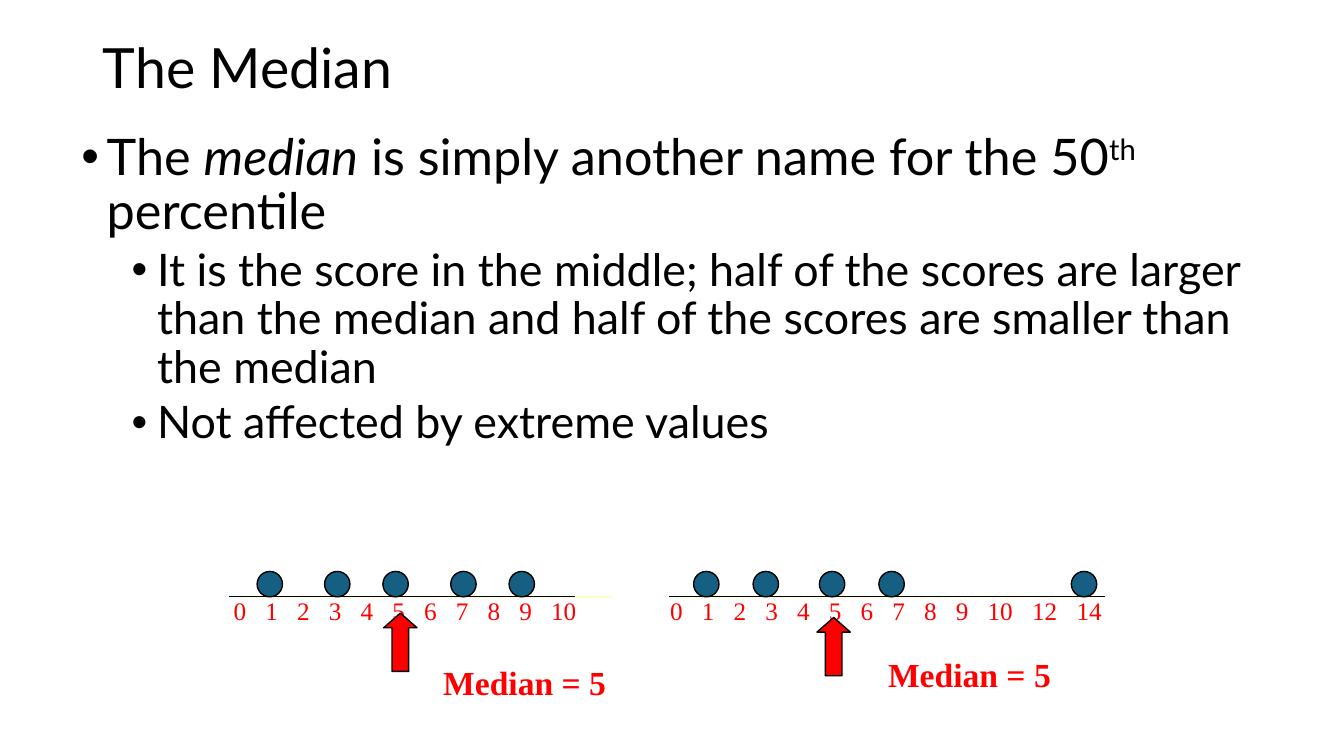
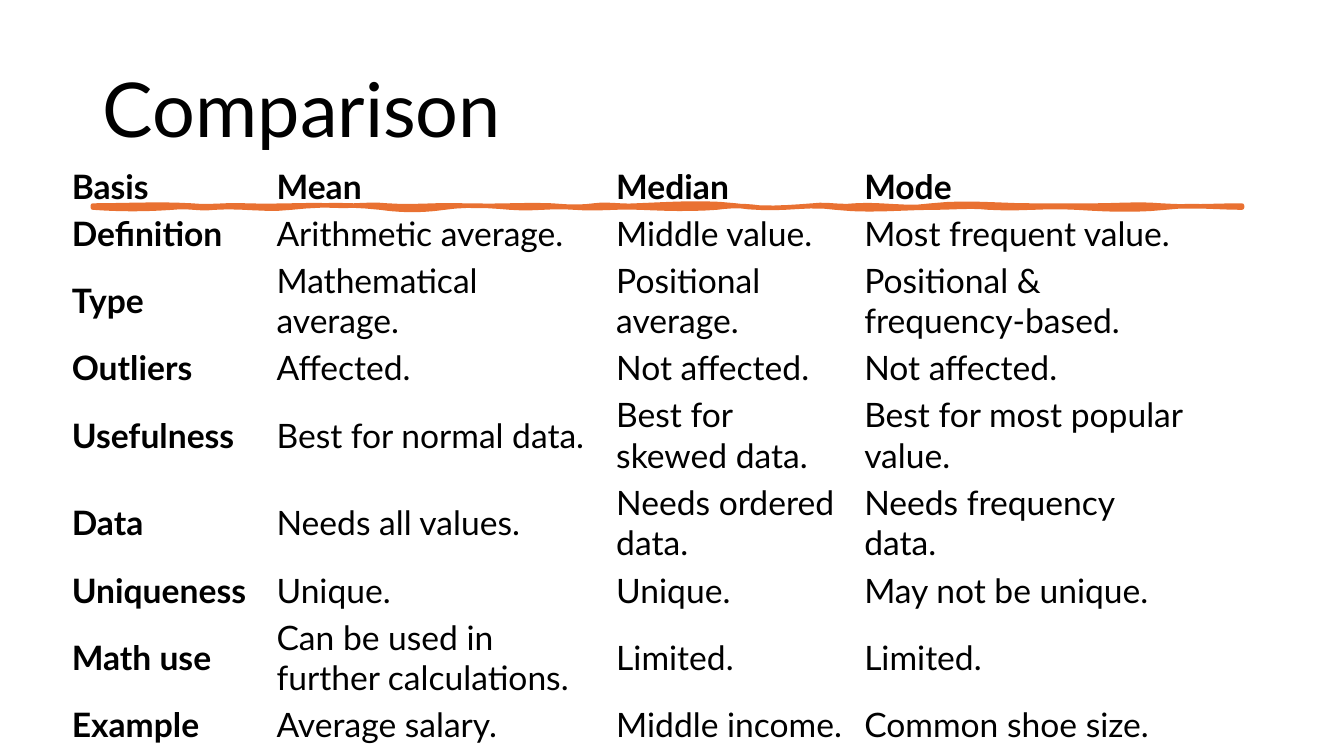
from lxml import etree
from pptx import Presentation
from pptx.dml.color import RGBColor
from pptx.enum.shapes import MSO_CONNECTOR, MSO_SHAPE
from pptx.enum.text import MSO_ANCHOR, MSO_AUTO_SIZE, PP_ALIGN
from pptx.oxml.ns import qn
from pptx.util import Cm, Pt

COLORS = {
    "text": "000000",
    "background": "FFFFFF",
    "dot": "156082",
    "median": "FF0000",
    "pale": "FFFFCC",
    "brush": "E97132",
}
BODY_FONT, AXIS_FONT = "Lato", "Times New Roman"
TITLE_LEFT, TITLE_TOP, TITLE_WIDTH = 2.34, 1.02, 29.21
DIGIT_WIDTH, LABEL_GAP = 0.32, 0.48
NO_STYLE_TABLE = "{2D5ABB26-0587-4C30-8999-92F81FD0307C}"

DEFINITION = [
    (0, [("The ", {}), ("median", {"italic": True}),
         (" is simply another name for the 50", {}),
         ("th", {"baseline": 30}), (" percentile", {})]),
    (1, [("It is the score in the middle; half of the scores are larger than "
          "the median and half of the scores are smaller than the median", {})]),
    (1, [("Not affected by extreme values", {})]),
]

# Number lines: lengths in cm, relative to the left and top of each box.
NUMBER_LINES = [
    {"box": (5.64, 14.4, 11.02), "scores": range(11),
     "dots": (0.84, 2.54, 4.01, 5.72, 7.19),
     "axis": (0.13, 8.86), "pale_axis": (0.43, 9.8),
     "arrow": (4.03, 1.05), "caption": (5.28, 2.08)},
    {"box": (16.64, 14.4, 11.89), "scores": (*range(11), 12, 14),
     "dots": (0.84, 2.34, 4.01, 5.51, 10.36),
     "axis": (0.23, 11.2), "pale_axis": (0.46, 11.07),
     "arrow": (3.95, 1.16), "caption": (5.49, 1.88)},
]

COMPARISON = [
    ("Basis", "Mean", "Median", "Mode"),
    ("Definition", "Arithmetic average.", "Middle value.", "Most frequent value."),
    ("Type", "Mathematical average.", "Positional average.",
     "Positional & frequency-based."),
    ("Outliers", "Affected.", "Not affected.", "Not affected."),
    ("Usefulness", "Best for normal data.", "Best for skewed data.",
     "Best for most popular value."),
    ("Data", "Needs all values.", "Needs ordered data.", "Needs frequency data."),
    ("Uniqueness", "Unique.", "Unique.", "May not be unique."),
    ("Math use", "Can be used in further calculations.", "Limited.", "Limited."),
    ("Example", "Average salary.", "Middle income.", "Common shoe size."),
]
COLUMN_WIDTHS = (5.16, 8.56, 6.25, 8.51)
ONE_LINE, TWO_LINES = 1.18, 2.21
TWO_LINE_ROWS = {"Type", "Usefulness", "Data", "Math use"}

# Brush stroke edges: (end of the wave, bend before that end).
UPPER_EDGE = [
    (2.49, -0.05), (3.86, -0.03), (6.07, -0.03), (7.42, -0.05), (9.35, -0.03),
    (11.58, -0.03), (12.62, 0.05), (13.69, 0.03), (16.21, -0.1), (18.14, 0.05),
    (19.2, 0.05), (21.13, 0.1), (23.65, 0), (25.27, 0), (26.92, -0.05), (28.96, 0),
]
LOWER_EDGE = [
    (27.03, -0.08), (24.79, 0.05), (22.58, 0.05), (21.23, 0), (18.72, 0.1),
    (16.79, 0.05), (15.72, -0.05), (13.79, 0.03), (12.14, 0.05), (10.52, 0.05),
    (8.86, -0.08), (7.24, 0.08), (5, -0.08), (3.07, -0.05), (2.01, -0.05), (0, 0.05),
]


def rgb(color):
    return RGBColor.from_string(COLORS[color])


def write(paragraph, text, size, font=BODY_FONT, color="text", bold=False,
          italic=False, baseline=0):
    run = paragraph.add_run()
    run.text = text
    run.font.size, run.font.name = Pt(size), font
    run.font.bold, run.font.italic = bold, italic
    run.font.color.rgb = rgb(color)
    if baseline:
        run.font._element.set("baseline", str(baseline * 1000))


def add_text_frame(slide, left, top, width, height):
    frame = slide.shapes.add_textbox(Cm(left), Cm(top), Cm(width), Cm(height)).text_frame
    frame.word_wrap = True
    return frame


def add_titled_slide(deck, title, height, size):
    slide = deck.slides.add_slide(deck.slide_layouts[5])
    slide.background.fill.solid()
    slide.background.fill.fore_color.rgb = rgb("background")
    heading = slide.shapes.title
    heading.left, heading.top = Cm(TITLE_LEFT), Cm(TITLE_TOP)
    heading.width, heading.height = Cm(TITLE_WIDTH), Cm(height)
    frame = heading.text_frame
    frame.auto_size = MSO_AUTO_SIZE.NONE
    frame.vertical_anchor = MSO_ANCHOR.MIDDLE
    paragraph = frame.paragraphs[0]
    paragraph.alignment, paragraph.line_spacing = PP_ALIGN.LEFT, 0.9
    write(paragraph, title, size)
    return slide


def add_bullets(slide, box, items):
    frame = add_text_frame(slide, *box)
    for index, (level, runs) in enumerate(items):
        paragraph = frame.add_paragraph() if index else frame.paragraphs[0]
        paragraph.level, paragraph.line_spacing = level, 0.9
        paragraph.space_before = Pt(5 if level else 10)
        properties = paragraph._p.get_or_add_pPr()
        properties.set("marL", str(Cm(0.64 + 1.27 * level)))
        properties.set("indent", str(-Cm(0.64)))
        etree.SubElement(properties, qn("a:buFont"), typeface="Arial")
        etree.SubElement(properties, qn("a:buChar"), char="•")
        for text, style in runs:
            write(paragraph, text, 32 if level else 36, **style)


def add_outlined(slide, preset, left, top, width, height, color):
    shape = slide.shapes.add_shape(preset, Cm(left), Cm(top), Cm(width), Cm(height))
    shape.shadow.inherit = False
    shape.fill.solid()
    shape.fill.fore_color.rgb = rgb(color)
    shape.line.color.rgb = rgb("text")
    shape.line.width = Pt(1)
    return shape


def add_rule(slide, start, end, y, color, weight):
    rule = slide.shapes.add_connector(
        MSO_CONNECTOR.STRAIGHT, Cm(start), Cm(y), Cm(end), Cm(y))
    rule.line.color.rgb = rgb(color)
    rule.line.width = Pt(weight)
    etree.SubElement(rule._element.spPr, qn("a:effectLst"))


def add_red_text(slide, left, top, width, height, text, size, bold=False):
    frame = add_text_frame(slide, left, top, width, height)
    frame.margin_top = Cm(0.2)
    paragraph = frame.paragraphs[0]
    write(paragraph, text, size, font=AXIS_FONT, color="median", bold=bold)
    return paragraph


def set_score_tabs(paragraph, labels):
    """Put a tab stop after each label, one fixed gap beyond its last digit."""
    tabs = etree.SubElement(paragraph._p.get_or_add_pPr(), qn("a:tabLst"))
    position = 0
    for label in labels[:-1]:
        position += len(label) * DIGIT_WIDTH + LABEL_GAP
        etree.SubElement(tabs, qn("a:tab"), pos=str(Cm(position)), algn="l")


def add_number_line(slide, box, scores, dots, axis, pale_axis, arrow, caption):
    left, top, width = box
    diameter = 0.64
    axis_y = top + diameter
    add_rule(slide, left + pale_axis[0], left + pale_axis[1], axis_y, "pale", 1)
    labels = [str(score) for score in scores]
    scale = add_red_text(slide, left, top + 0.41, width, 1.02, "\t".join(labels), 18)
    set_score_tabs(scale, labels)
    for dot in dots:
        add_outlined(slide, MSO_SHAPE.OVAL, left + dot, top, diameter, diameter, "dot")
    pointer = add_outlined(slide, MSO_SHAPE.UP_ARROW, left + arrow[0], top + arrow[1],
                           0.84, 1.47, "median")
    pointer.adjustments[1] = 0.44
    add_red_text(slide, left + caption[0], top + caption[1], 5, 1.27,
                 "Median = 5", 24, bold=True)
    add_rule(slide, left + axis[0], left + axis[1], axis_y, "text", 0.75)


def wave_points(start, y, edge, steps=6):
    """Sample smooth waves that each leave and return to the height y."""
    points, bend_in = [], 0
    for end, bend_out in edge:
        for step in range(1, steps + 1):
            t = step / steps
            lift = 3 * t * (1 - t) * (bend_in * (1 - t) + bend_out * t)
            points.append((Cm(start + (end - start) * t), Cm(y + lift)))
        start, bend_in = end, -bend_out
    return points


def add_brush_stroke(slide, left, top, thickness=0.05):
    upper = wave_points(0, top, UPPER_EDGE)
    lower = wave_points(UPPER_EDGE[-1][0], top + thickness, LOWER_EDGE)
    corner = (Cm(UPPER_EDGE[-1][0]), Cm(top + thickness))
    outline = slide.shapes.build_freeform(0, Cm(top))
    outline.add_line_segments([*upper, corner, *lower], close=True)
    stroke = outline.convert_to_shape(Cm(left), 0)
    stroke.shadow.inherit = False
    stroke.fill.solid()
    stroke.fill.fore_color.rgb = rgb("brush")
    stroke.line.color.rgb = rgb("brush")
    stroke.line.width = Pt(3.25)


def add_comparison_table(slide, left, top, rows):
    heights = [TWO_LINES if row[0] in TWO_LINE_ROWS else ONE_LINE for row in rows]
    table = slide.shapes.add_table(
        len(rows), len(COLUMN_WIDTHS), Cm(left), Cm(top),
        Cm(sum(COLUMN_WIDTHS)), Cm(sum(heights))).table
    table.first_row = table.horz_banding = False
    table._tbl.tblPr.find(qn("a:tableStyleId")).text = NO_STYLE_TABLE
    for column, width in zip(table.columns, COLUMN_WIDTHS):
        column.width = Cm(width)
    for row_index, (row, height) in enumerate(zip(rows, heights)):
        table.rows[row_index].height = Cm(height)
        for column_index, text in enumerate(row):
            cell = table.cell(row_index, column_index)
            cell.fill.background()
            cell.vertical_anchor = MSO_ANCHOR.MIDDLE
            cell.margin_left = cell.margin_right = Cm(0.18)
            cell.margin_top = cell.margin_bottom = Cm(0.08)
            write(cell.text_frame.paragraphs[0], text, 24,
                  bold=row_index == 0 or column_index == 0)


def build_median_slide(deck):
    slide = add_titled_slide(deck, "The Median", 1.52, 39.6)
    add_bullets(slide, (1.8, 3.2, 30.33, 5.84), DEFINITION)
    for number_line in NUMBER_LINES:
        add_number_line(slide, **number_line)


def build_comparison_slide(deck):
    slide = add_titled_slide(deck, "Comparison", 3.68, 54)
    add_brush_stroke(slide, TITLE_LEFT, 5.18)
    add_comparison_table(slide, 1.63, 4.11, COMPARISON)


def main():
    deck = Presentation()
    deck.slide_width, deck.slide_height = Cm(33.87), Cm(19.05)
    build_median_slide(deck)
    build_comparison_slide(deck)
    deck.save("out.pptx")


if __name__ == "__main__":
    main()
